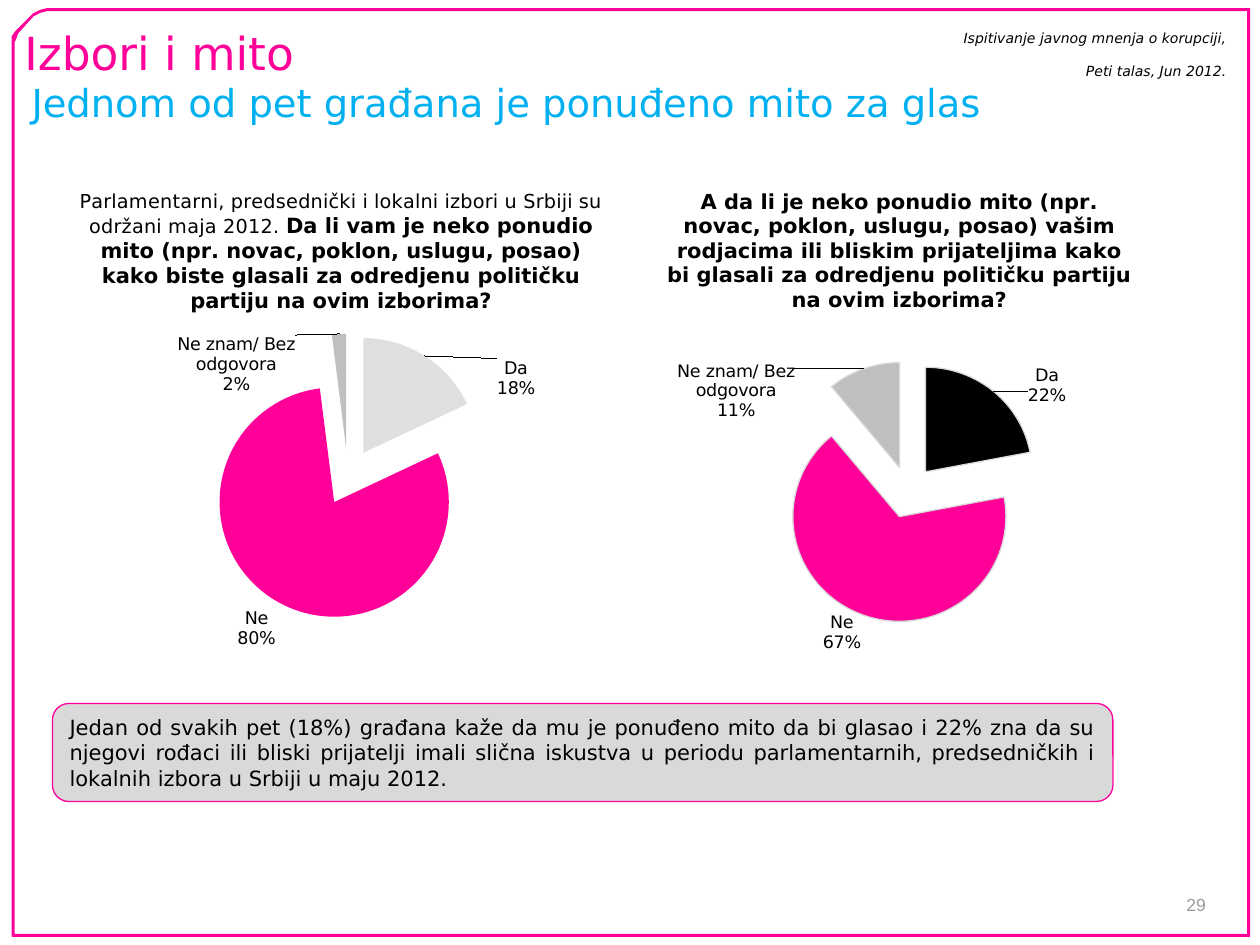
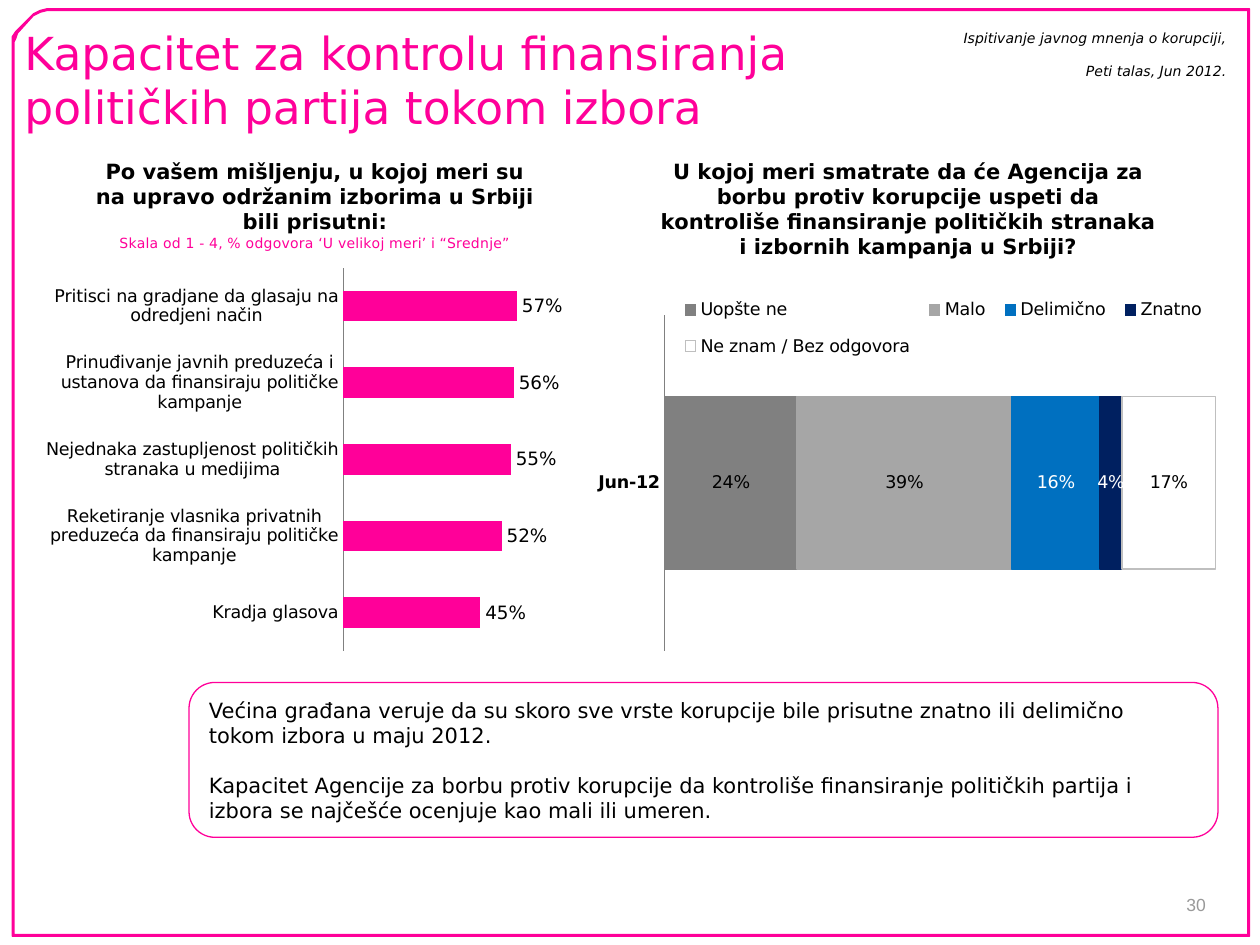
from copy import deepcopy

from lxml import etree
from pptx import Presentation
from pptx.chart.data import CategoryChartData
from pptx.dml.color import RGBColor
from pptx.enum import chart as ch, shapes, text
from pptx.oxml import ns
from pptx.util import Pt

PINK = RGBColor(0xFF, 0x00, 0x99)
SKY = RGBColor(0x00, 0xB0, 0xF0)
BLUE = RGBColor(0x00, 0x70, 0xC0)
NAVY = RGBColor(0x00, 0x20, 0x60)
BLACK = RGBColor(0x00, 0x00, 0x00)
WHITE = RGBColor(0xFF, 0xFF, 0xFF)
GREY = RGBColor(0x80, 0x80, 0x80)
MID_GREY = RGBColor(0xA6, 0xA6, 0xA6)
NUMBER_GREY = RGBColor(0x99, 0x99, 0x99)
SILVER = RGBColor(0xBF, 0xBF, 0xBF)
PANEL = RGBColor(0xD9, 0xD9, 0xD9)
PALE = RGBColor(0xDF, 0xDF, 0xDF)

FONT = "DejaVu Sans"
PERCENT = "0\\%"
RIGHT, JUSTIFY = text.PP_ALIGN.RIGHT, text.PP_ALIGN.JUSTIFY


def style(font, size, color, bold=False, italic=False, name=FONT):
    font.name, font.size, font.bold, font.italic = name, Pt(size), bold, italic
    font.color.rgb = color


# Text and shapes
def write(tf, lines, size, color, align=None, gap=0, middle=False, **font):
    tf.word_wrap = True
    if middle:
        tf.vertical_anchor = text.MSO_ANCHOR.MIDDLE
    for i, line in enumerate(lines):
        p = tf.paragraphs[0] if i == 0 else tf.add_paragraph()
        p.text = line
        p.alignment = align
        if i:
            p.space_before = Pt(gap)
        style(p.font, size, color, **font)


def add_text(s, box, lines, size, color, inset=0, **options):
    tf = s.shapes.add_textbox(*map(Pt, box)).text_frame
    tf.margin_left = tf.margin_right = Pt(2 * inset)
    tf.margin_top = tf.margin_bottom = Pt(inset)
    write(tf, lines, size, color, **options)
    return tf


def add_callout(s, box, lines, fill=None, right_inset=7.2, **options):
    sp = s.shapes.add_shape(shapes.MSO_SHAPE.ROUNDED_RECTANGLE, *map(Pt, box))
    sp.shadow.inherit = False
    if fill is None:
        sp.fill.background()
    else:
        sp.fill.solid()
        sp.fill.fore_color.rgb = fill
    sp.line.color.rgb = PINK
    sp.line.width = Pt(0.75)
    sp.text_frame.margin_right = Pt(right_inset)
    write(sp.text_frame, lines, 12, BLACK, middle=True, **options)


def add_frame(s):
    """Thin band between two outlines with a cut top left corner."""
    outer = [(6.9, 534.8), (6.9, 24.5), (7.4, 21), (9.4, 18), (18.7, 8),
             (23, 5.5), (27.4, 5), (714.5, 5), (714.5, 534.8)]
    inner = [(8, 533.5), (8, 24.5), (8.6, 22), (10.1, 19.4), (19.4, 9.4),
             (23, 7), (27.4, 6.3), (713.4, 6.3), (713.4, 533.5)]
    builder = s.shapes.build_freeform(*outer[0], scale=Pt(1))
    builder.add_line_segments(outer[1:])
    builder.move_to(*inner[0])
    builder.add_line_segments(inner[1:])
    sp = builder.convert_to_shape()
    sp.shadow.inherit = False
    sp.fill.solid()
    sp.fill.fore_color.rgb = PINK
    sp.line.color.rgb = PINK
    sp.line.width = Pt(0)


def new_slide(prs, number, title, title_box):
    s = prs.slides.add_slide(prs.slide_layouts[6])
    add_text(s, (661, 511, 28, 12), [str(number)], 10, NUMBER_GREY,
             align=RIGHT, middle=True, name="Arial")
    add_frame(s)
    add_text(s, title_box, [title], 26, PINK)
    add_text(s, (504, 13, 204, 36),
             ["Ispitivanje javnog mnenja o korupciji,", "Peti talas, Jun 2012."],
             8, BLACK, inset=3.6, align=RIGHT, gap=9.4, middle=True, italic=True)
    return s


# Charts
def set_layout(parent, index, **values):
    """Place a chart part; values are the manual layout entries in order."""
    for old in parent.findall(ns.qn("c:layout")):
        parent.remove(old)
    layout = etree.Element(ns.qn("c:layout"))
    manual = etree.SubElement(layout, ns.qn("c:manualLayout"))
    for tag, value in values.items():
        etree.SubElement(manual, ns.qn("c:" + tag)).set("val", str(value))
    parent.insert(index, layout)


def add_chart(s, kind, box, cats, series, title, plot_box):
    """title holds paragraphs, each a list of (text, size, bold, color)."""
    data = CategoryChartData(number_format=PERCENT)
    data.categories = cats
    for name, values in series:
        data.add_series(name, values)
    chart = s.shapes.add_chart(kind, *map(Pt, box), data).chart
    style(chart.font, 10, BLACK)
    chart.has_legend = False
    tf = chart.chart_title.text_frame
    for i, runs in enumerate(title):
        p = tf.paragraphs[0] if i == 0 else tf.add_paragraph()
        for words, size, bold, color in runs:
            r = p.add_run()
            r.text = words
            style(r.font, size, color, bold)
    x, y, w, h = plot_box
    set_layout(chart._chartSpace.chart.plotArea, 0, layoutTarget="inner",
               xMode="edge", yMode="edge", x=x, y=y, w=w, h=h)
    return chart


def paint(part, fill, line=None):
    part.format.fill.solid()
    part.format.fill.fore_color.rgb = fill
    if line is None:
        part.format.line.fill.background()
    else:
        part.format.line.color.rgb = line
        part.format.line.width = Pt(0.75)


def label(series, size, color=BLACK, position=None):
    labels = series.data_labels
    labels.show_value = True
    labels.number_format = PERCENT
    labels.number_format_is_linked = False
    style(labels.font, size, color)
    if position is not None:
        labels.position = position
    return labels


def shift_labels(labels, shifts):
    """Move single labels by fractions of the chart size, keeping their style."""
    shared = [e for e in labels._element if e.tag != ns.qn("c:showLeaderLines")]
    for place, (i, (x, y)) in enumerate(shifts.items()):
        item = etree.Element(ns.qn("c:dLbl"))
        etree.SubElement(item, ns.qn("c:idx")).set("val", str(i))
        set_layout(item, 1, x=x, y=y)
        item.extend(deepcopy(shared))
        labels._element.insert(place, item)


def add_pie(s, box, values, title, plot_box, colors, shifts, line=None):
    cats = ["Da", "Ne", "Ne znam/ Bez odgovora"]
    chart = add_chart(s, ch.XL_CHART_TYPE.PIE, box, cats, [("Series 1", values)],
                      [title], plot_box)
    chart.plots[0].vary_by_categories = True
    pie = chart.plots[0].series[0]
    for i, color in enumerate(colors):
        paint(pie.points[i], color, line)
    labels = label(pie, 10, position=ch.XL_LABEL_POSITION.OUTSIDE_END)
    labels.show_category_name = True
    separator = etree.Element(ns.qn("c:separator"))
    separator.text = "\n"
    labels._element.find(ns.qn("c:showBubbleSize")).addnext(separator)
    shift_labels(labels, shifts)
    explosion = etree.Element(ns.qn("c:explosion"))
    explosion.set("val", "25")
    pie._element.find(ns.qn("c:dPt")).addprevious(explosion)


def style_bars(chart, gap, overlap, bold=False):
    plot = chart.plots[0]
    plot.gap_width, plot.overlap = gap, overlap
    plot.vary_by_categories = False
    axis = chart.category_axis
    axis.reverse_order = True
    axis.major_tick_mark = ch.XL_TICK_MARK.NONE
    axis.format.line.color.rgb = GREY
    style(axis.tick_labels.font, 10, BLACK, bold)
    chart.value_axis.has_major_gridlines = False
    chart.value_axis.visible = False
    return plot.series


# Slides
def bribery_slide(prs):
    s = new_slide(prs, 29, "Izbori i mito", (14, 14.2, 692, 31))
    tf = add_text(s, (18, 48, 696, 24),
                  ["Jednom od pet građana je ponuđeno mito za glas"], 22, SKY)
    tf.paragraphs[0].line_spacing = 0.9
    add_pie(s, (343, 95.6, 342, 282), (22, 67, 11),
            [("A da li je neko ponudio mito (npr. novac, poklon, uslugu, posao) "
              "vašim rodjacima ili bliskim prijateljima kako bi glasali za "
              "odredjenu političku partiju na ovim izborima?", 12, True, BLACK)],
            (0.29, 0.4, 0.45, 0.54), (BLACK, PINK, SILVER),
            {0: (0.05, 0.04), 2: (-0.11, 0.12)}, PANEL)
    add_pie(s, (0, 96, 390, 276), (18, 80, 2),
            [("Parlamentarni, predsednički i lokalni izbori u Srbiji su održani "
              "maja 2012. ", 11, False, BLACK),
             ("Da li vam je neko ponudio mito (npr. novac, poklon, uslugu, posao) "
              "kako biste glasali za odredjenu političku partiju na ovim "
              "izborima?", 12, True, BLACK)],
            (0.3, 0.34, 0.42, 0.6), (PALE, PINK, SILVER),
            {0: (0.1, 0.1), 2: (-0.15, 0.14)})
    add_callout(s, (30, 402, 606, 56),
                ["Jedan od svakih pet (18%) građana kaže da mu je ponuđeno mito da "
                 "bi glasao i 22% zna da su njegovi rođaci ili bliski prijatelji "
                 "imali slična iskustva u periodu parlamentarnih, predsedničkih i "
                 "lokalnih izbora u Srbiji u maju 2012."], PANEL, align=JUSTIFY)


def financing_slide(prs):
    s = new_slide(prs, 30, "Kapacitet za kontrolu finansiranja političkih partija "
                  "tokom izbora", (14, 14.2, 490, 63))

    # Forms of corruption seen in the elections
    forms = {
        "Pritisci na gradjane da glasaju na odredjeni način": 57,
        "Prinuđivanje javnih preduzeća i ustanova da finansiraju političke "
        "kampanje": 56,
        "Nejednaka zastupljenost političkih stranaka u medijima": 55,
        "Reketiranje vlasnika privatnih preduzeća da finansiraju političke "
        "kampanje": 52,
        "Kradja glasova": 45,
    }
    chart = add_chart(
        s, ch.XL_CHART_TYPE.BAR_CLUSTERED, (18, 78, 324, 300), list(forms),
        [("Series 1", list(forms.values()))],
        [[("Po vašem mišljenju, u kojoj meri su na upravo održanim izborima u "
           "Srbiji bili prisutni:", 12, True, BLACK)],
         [("Skala od 1 - 4, % odgovora ‘U velikoj meri’ i “Srednje”",
           8, False, PINK)]],
        (0.55, 0.25, 0.43, 0.73))
    bars = style_bars(chart, 150, -25)[0]
    chart.value_axis.minimum_scale, chart.value_axis.maximum_scale = 0, 80
    paint(bars, PINK)
    label(bars, 10.5, position=ch.XL_LABEL_POSITION.OUTSIDE_END)

    add_callout(s, (108, 390, 588, 88.5),
                ["Većina građana veruje da su skoro sve vrste korupcije bile "
                 "prisutne znatno ili delimično tokom izbora u maju 2012.",
                 "Kapacitet Agencije za borbu protiv korupcije da kontroliše "
                 "finansiranje političkih partija i izbora se najčešće ocenjuje "
                 "kao mali ili umeren."],
                right_inset=14, align=text.PP_ALIGN.LEFT, gap=14)

    # Expected success of the agency: name, share, fill, line, label colour
    answers = [
        ("Uopšte ne", 24, GREY, GREY, BLACK),
        ("Malo", 39, MID_GREY, MID_GREY, BLACK),
        ("Delimično", 16, BLUE, BLUE, WHITE),
        ("Znatno", 4, NAVY, NAVY, WHITE),
        ("Ne znam / Bez odgovora", 17, WHITE, SILVER, BLACK),
    ]
    chart = add_chart(
        s, ch.XL_CHART_TYPE.BAR_STACKED_100, (336, 78, 366, 300), ["Jun-12"],
        [(name, [share]) for name, share, *_ in answers],
        [[("U kojoj meri smatrate da će Agencija za borbu protiv korupcije uspeti "
           "da kontroliše finansiranje političkih stranaka i izbornih kampanja u "
           "Srbiji?", 12, True, BLACK)]],
        (0.12, 0.34, 0.86, 0.64))
    parts = style_bars(chart, 95, 100, bold=True)
    for part, (_, _, fill, line, color) in zip(parts, answers):
        paint(part, fill, line)
        label(part, 10, color)
    chart.has_legend = True
    chart.legend.position = ch.XL_LEGEND_POSITION.TOP
    chart.legend.include_in_layout = False
    style(chart.legend.font, 10, BLACK)
    set_layout(chart.legend._element, 1, xMode="edge", yMode="edge",
               x=0.13, y=0.28, w=0.85, h=0.17)


def main():
    prs = Presentation()
    prs.slide_width, prs.slide_height = Pt(720), Pt(540)
    bribery_slide(prs)
    financing_slide(prs)
    prs.save("out.pptx")


if __name__ == "__main__":
    main()
